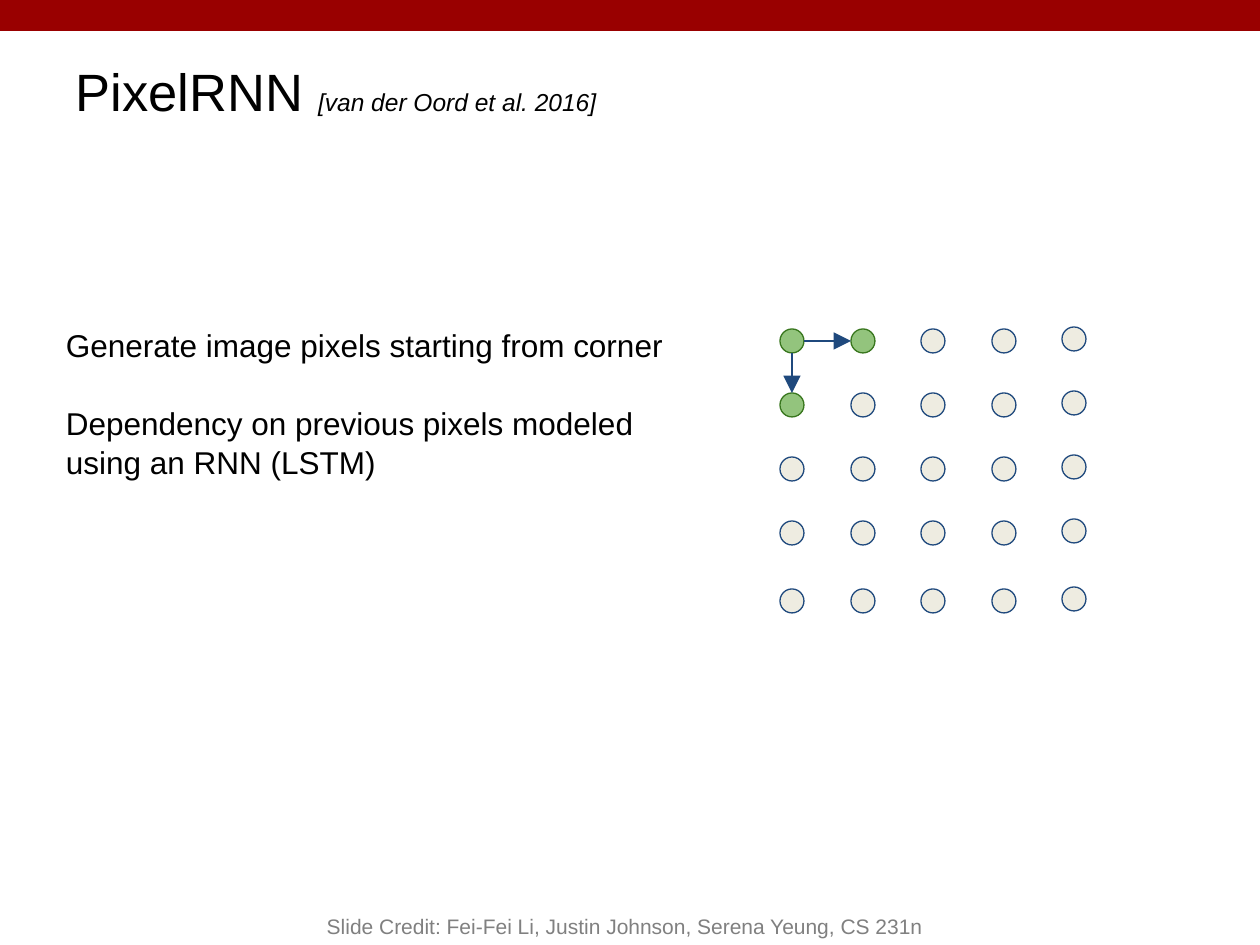
import pptx
import pptx.util
import pptx.dml.color
import pptx.enum.shapes
import pptx.enum.text
import pptx.oxml.ns
import lxml.etree

PX = 914400 / 126
ANCHOR = pptx.enum.text.MSO_ANCHOR
SHAPE = pptx.enum.shapes.MSO_SHAPE


def px(*lengths):
    return [pptx.util.Emu(round(length * PX)) for length in lengths]


def color(hex_value):
    return pptx.dml.color.RGBColor.from_string(hex_value)


presentation = pptx.Presentation()
presentation.slide_width, presentation.slide_height = px(1260, 945)
slide = presentation.slides.add_slide(presentation.slide_layouts[6])

banner = slide.shapes.add_shape(SHAPE.RECTANGLE, *px(0, 0, 1260, 31))
banner.shadow.inherit = False
banner.fill.solid()
banner.fill.fore_color.rgb = color("990000")
banner.line.fill.background()

column_lefts = [780, 851, 921, 992, 1062]
row_tops = [329, 393, 457, 521, 589]
generated = {(0, 0), (0, 1), (1, 0)}
for row, top in enumerate(row_tops):
    for column, left in enumerate(column_lefts):
        lift = 2 if column == 4 else 0
        pixel = slide.shapes.add_shape(SHAPE.OVAL, *px(left, top - lift, 24, 24))
        fill, outline = ("93C47D", "38761D") if (row, column) in generated else ("EEECE1", "1F497D")
        pixel.shadow.inherit = False
        pixel.fill.solid()
        pixel.fill.fore_color.rgb = color(fill)
        pixel.line.color.rgb = color(outline)
        pixel.line.width = pptx.util.Pt(0.75)

for ends in [(792, 353, 792, 393), (804, 341, 851, 341)]:
    arrow = slide.shapes.add_connector(pptx.enum.shapes.MSO_CONNECTOR.STRAIGHT, *px(*ends))
    arrow.line.color.rgb = color("1F497D")
    arrow.line.width = pptx.util.Pt(0.75)
    line = arrow.line._get_or_add_ln()
    head = lxml.etree.SubElement(line, pptx.oxml.ns.qn("a:tailEnd"))
    head.set("type", "triangle")
    head.set("w", "lg")
    head.set("len", "lg")
    lxml.etree.SubElement(arrow._element.spPr, pptx.oxml.ns.qn("a:effectLst"))

texts = [
    ((53, 311, 631, 184), ANCHOR.TOP, 13, 18, "000000",
     ["Generate image pixels starting from corner",
      "Dependency on previous pixels modeled using an RNN (LSTM)"]),
    ((63, 31, 1134, 118), ANCHOR.MIDDLE, 13, 30, "000000", ["PixelRNN "]),
    ((252, 882, 746, 63), ANCHOR.BOTTOM, 6, 12, "808080",
     ["Slide Credit: Fei-Fei Li, Justin Johnson, Serena Yeung, CS 231n"]),
]
frames = []
for bounds, anchor, inset, size, text_color, lines in texts:
    frame = slide.shapes.add_textbox(*px(*bounds)).text_frame
    frame.word_wrap = True
    frame.vertical_anchor = anchor
    frame.margin_top, frame.margin_bottom = px(inset, inset)
    frame.margin_left, frame.margin_right = px(13, 13)
    frame.text = "\n".join(lines)
    for paragraph in frame.paragraphs:
        paragraph.font.name = "Arial"
        paragraph.font.size = pptx.util.Pt(size)
        paragraph.font.color.rgb = color(text_color)
    frames.append(frame)

body, title, credit = frames
for paragraph in body.paragraphs:
    paragraph.line_spacing = 1.05
body.paragraphs[1].space_before = pptx.util.Pt(21.7)

citation = title.paragraphs[0].add_run()
citation.text = "[van der Oord et al. 2016]"
citation.font.size = pptx.util.Pt(14)
citation.font.italic = True
credit.paragraphs[0].alignment = pptx.enum.text.PP_ALIGN.CENTER

presentation.save("out.pptx")
